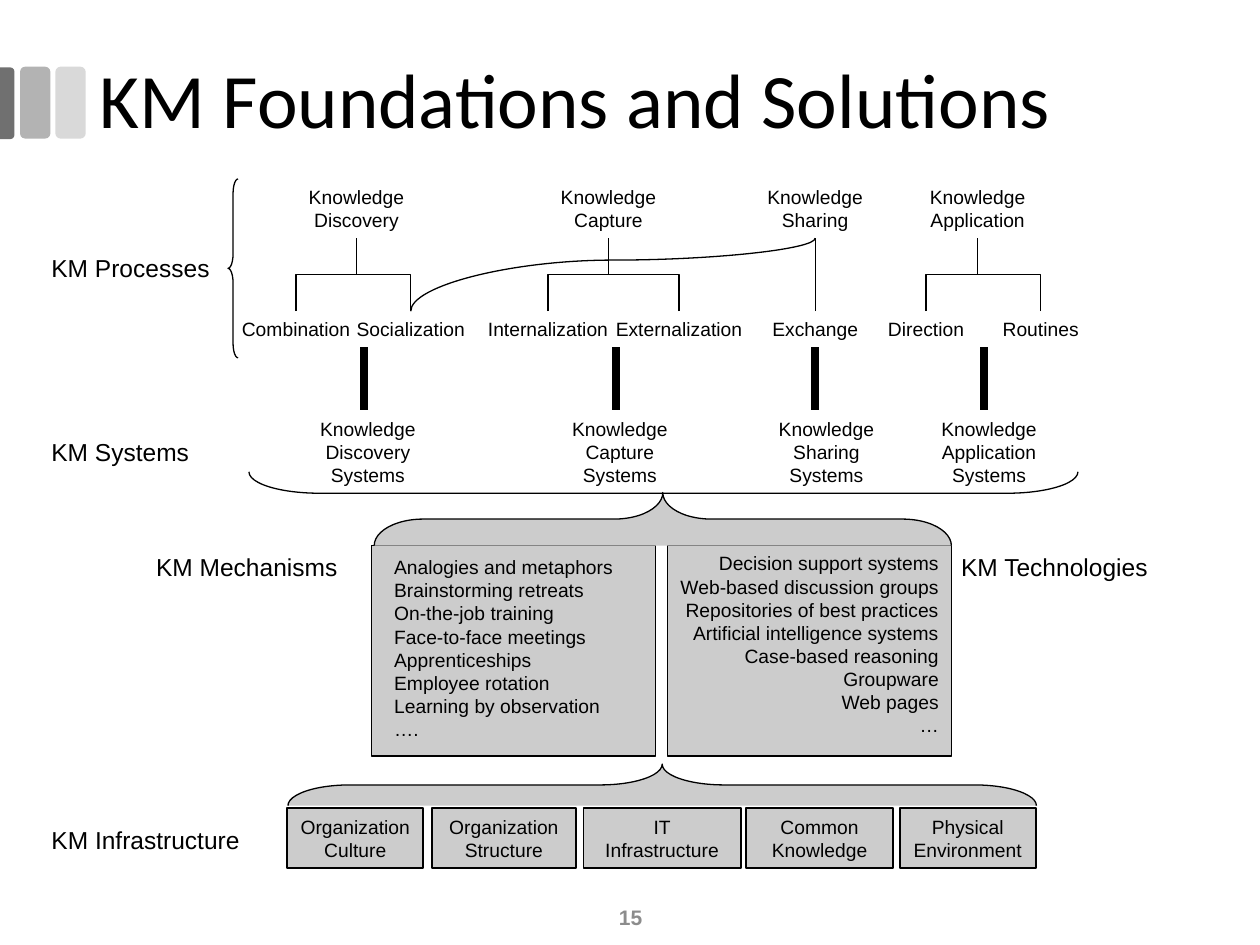
"""Build the KM Foundations and Solutions slide."""
from pptx import Presentation, oxml, util as u
from pptx.dml import color
from pptx.enum import shapes, text
from pptx.oxml import ns

COLORS = {"ink": "000000", "panel": "CCCCCC", "number": "8C8C8C",
          "dark": "707070", "mid": "B3B3B3", "light": "D9D9D9"}
RGB = {name: color.RGBColor.from_string(value) for name, value in COLORS.items()}
SHAPE, LINK, ALIGN = shapes.MSO_SHAPE, shapes.MSO_CONNECTOR, text.PP_ALIGN

deck = Presentation()
deck.slide_width, deck.slide_height = u.Inches(10), u.Inches(7.5)
slide = deck.slides.add_slide(deck.slide_layouts[5])


def add_block(place, lines=(), kind=None, fill=None, line=None, size=11,
              align=ALIGN.CENTER, ink="ink", bold=False):
    box = [u.Inches(value) for value in place]
    if kind is None:
        block = slide.shapes.add_textbox(*box)
    else:
        block = slide.shapes.add_shape(kind, *box)
        block.shadow.inherit = False
        if fill:
            block.fill.solid()
            block.fill.fore_color.rgb = RGB[fill]
        else:
            block.fill.background()
        if line:
            block.line.color.rgb = RGB["ink"]
            block.line.width = u.Pt(line)
        else:
            block.line.fill.background()
    if lines:
        frame = block.text_frame
        frame.word_wrap = True
        frame.auto_size = text.MSO_AUTO_SIZE.SHAPE_TO_FIT_TEXT
        frame.text = "\n".join(lines)
        for paragraph in frame.paragraphs:
            paragraph.alignment = align
            paragraph.font.name, paragraph.font.size = "Arial", u.Pt(size)
            paragraph.font.bold = bold
            paragraph.font.color.rgb = RGB[ink]
    return block


def add_link(start, end, kind=LINK.STRAIGHT, width=0.75, bend=None):
    (x1, y1), (x2, y2) = start, end
    if kind != LINK.STRAIGHT:
        mid_x, mid_y = (x1 + x2) / 2, (y1 + y2) / 2
        half_rise, half_run = (y1 - y2) / 2, abs(x2 - x1) / 2
        side = 1 if x2 > x1 else -1
        x1, x2 = mid_x - side * half_rise, mid_x + side * half_rise
        y1, y2 = mid_y - half_run, mid_y + half_run
    link = slide.shapes.add_connector(kind, *[u.Inches(v) for v in (x1, y1, x2, y2)])
    link.line.color.rgb = RGB["ink"]
    link.line.width = u.Pt(width)
    properties = link._element.spPr
    if kind != LINK.STRAIGHT:
        properties.find(ns.qn("a:xfrm")).set("rot", "16200000" if side > 0 else "5400000")
    if bend:
        guides = properties.find(ns.qn("a:prstGeom")).find(ns.qn("a:avLst"))
        guides.append(oxml.parse_xml(
            f'<a:gd {ns.nsdecls("a")} name="adj1" fmla="val {round(bend * 100000)}"/>'))
    properties.append(oxml.parse_xml(f'<a:effectLst {ns.nsdecls("a")}/>'))


for left, shade in ((0.44, "light"), (0.16, "mid")):
    add_block((left, 0.53, 0.24, 0.57), kind=SHAPE.ROUNDED_RECTANGLE, fill=shade)
edge_bar = add_block((-0.23, 0.76, 0.57, 0.12), kind=SHAPE.ROUND_2_SAME_RECTANGLE, fill="dark")
edge_bar.rotation = 90
edge_bar.adjustments[0] = 0.29

title = slide.shapes.title
title.left, title.top, title.width, title.height = [u.Inches(v) for v in (0.69, 0.17, 8.62, 1.31)]
title.text_frame.text = "KM Foundations and Solutions"
title.text_frame.vertical_anchor = text.MSO_ANCHOR.MIDDLE
heading = title.text_frame.paragraphs[0]
heading.alignment, heading.line_spacing = ALIGN.LEFT, 0.9
heading.font.name, heading.font.size = "Calibri", u.Pt(44)
heading.font.color.rgb = RGB["ink"]

for left in (2.95, 5.3):
    add_block((left, 4.33, 2.25, 1.67), kind=SHAPE.RECTANGLE, fill="panel", line=0.75)

for label, left, top, width in (
        ("KM Processes", 0.31, 1.96, 1.67), ("KM Systems", 0.31, 3.42, 1.67),
        ("KM Mechanisms", 1.14, 4.33, 1.72), ("KM Technologies", 7.53, 4.33, 1.86),
        ("KM Infrastructure", 0.31, 6.5, 1.82)):
    add_block((left, top, width, 0.33), [label], size=14, align=ALIGN.LEFT)

add_block((3.03, 4.36, 2, 1.57), [
    "Analogies and metaphors", "Brainstorming retreats", "On-the-job training",
    "Face-to-face meetings", "Apprenticeships", "Employee rotation",
    "Learning by observation", "…."], align=ALIGN.LEFT)
add_block((5.13, 4.33, 2.42, 1.76), [
    "Decision support systems", "Web-based discussion groups",
    "Repositories of best practices", "Artificial intelligence systems",
    "Case-based reasoning", "Groupware", "Web pages", "…"], align=ALIGN.RIGHT)

processes = (
    ("Discovery", 2.83, 2.89, (("Combination", 2.35, 1.08), ("Socialization", 3.26, 1.08))),
    ("Capture", 4.83, 4.89, (("Internalization", 4.35, 1.17), ("Externalization", 5.39, 1.25))),
    ("Sharing", 6.47, 6.47, (("Exchange", 6.47, 0.92),)),
    ("Application", 7.76, 7.81, (("Direction", 7.35, 0.83), ("Routines", 8.26, 0.83))),
)
for process, center, stem, methods in processes:
    add_block((center - 0.5, 1.42, 1, 0.47), [f"Knowledge {process}"])
    add_block((center - 0.41, 3.26, 1, 0.65), [f"Knowledge {process} Systems"])
    for method, middle, width in methods:
        add_block((middle - width / 2, 2.47, width, 0.28), [method])
        add_link((middle, 2.47), (center, 1.89),
                 LINK.STRAIGHT if middle == center else LINK.ELBOW)
    add_link((stem, 3.25), (stem, 2.75), width=4.5)
add_link((3.26, 2.47), (6.47, 1.89), LINK.CURVE, bend=0.7)

for asset, left, width in (
        (["Organization Culture"], 2.28, 1.08), (["Organization", "Structure"], 3.43, 1.14),
        (["IT", "Infrastructure"], 4.63, 1.25), (["Common Knowledge"], 5.92, 1.17),
        (["Physical Environment"], 7.14, 1.08)):
    add_block((left, 6.41, width, 0.48), asset, SHAPE.RECTANGLE, "panel", 1)

for place, kind, fill, turn, curl in (
        ((5.09, 3.26, 0.33, 5.94), SHAPE.LEFT_BRACE, "panel", 90, 1.49),
        ((5.05, 1.83, 0.42, 4.58), SHAPE.LEFT_BRACE, "panel", 90, 0.92),
        ((5.18, 0.54, 0.17, 6.58), SHAPE.RIGHT_BRACKET, None, 90, 3.29),
        ((1.81, 1.42, 0.08, 1.42), SHAPE.LEFT_BRACE, None, 0, 1.42)):
    bracket = add_block(place, kind=kind, fill=fill, line=0.75)
    bracket.rotation = turn
    bracket.adjustments[0] = curl

page_number = add_block((3.88, 7.08, 2.25, 0.4), ["15"], size=12, ink="number", bold=True)
page_number.text_frame.auto_size = text.MSO_AUTO_SIZE.NONE
page_number.text_frame.vertical_anchor = text.MSO_ANCHOR.MIDDLE

deck.save("out.pptx")
